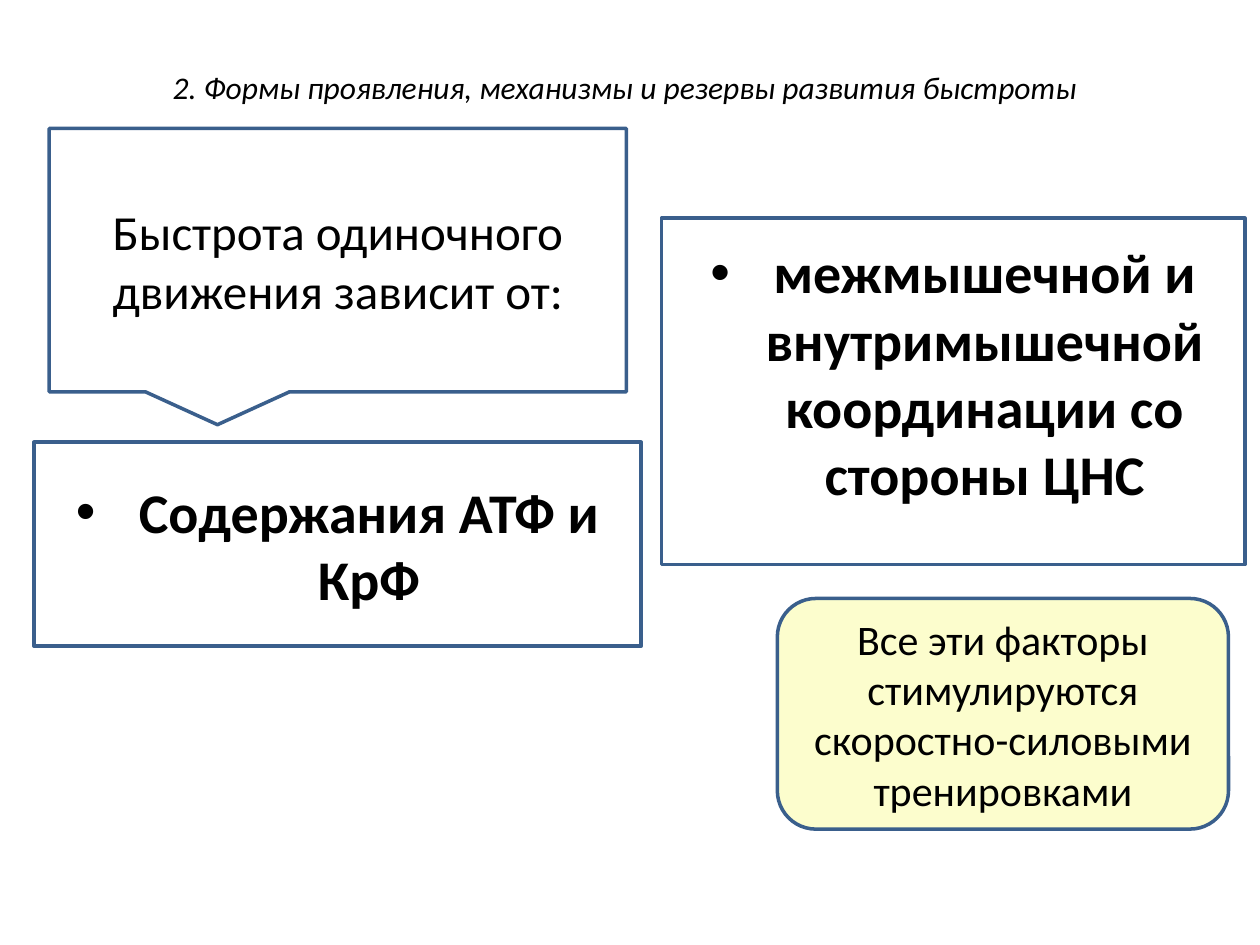
from lxml import etree
from pptx import Presentation
from pptx.dml.color import RGBColor
from pptx.enum.shapes import MSO_SHAPE
from pptx.enum.text import MSO_ANCHOR, PP_ALIGN
from pptx.oxml.ns import qn
from pptx.util import Pt

CALLOUT = MSO_SHAPE.RECTANGULAR_CALLOUT
RECT = MSO_SHAPE.RECTANGLE
ROUNDED = MSO_SHAPE.ROUNDED_RECTANGLE
MIDDLE = MSO_ANCHOR.MIDDLE
CENTER = PP_ALIGN.CENTER

BLACK = RGBColor(0x00, 0x00, 0x00)
WHITE = RGBColor(0xFF, 0xFF, 0xFF)
BLUE = RGBColor(0x3A, 0x5F, 0x8C)
CREAM = RGBColor(0xFC, 0xFD, 0xCD)
FONT = "Calibri"
INDENT = Pt(36)

TITLE = "2. Формы проявления, механизмы и резервы развития быстроты"
TITLE_BOX = (30.2, 21.6, 653.8, 56.2)

# kind, box, fill, text, size, is factor, bottom inset
BOXES = [
    (CALLOUT, (28.1, 73.4, 329.8, 150.5), WHITE,
     "Быстрота одиночного движения зависит от:", 28, False, 3.6),
    (RECT, (378, 124.6, 333.4, 198), WHITE,
     "межмышечной и внутримышечной координации со стороны ЦНС", 32, True, 25.2),
    (RECT, (19.4, 252.7, 347, 116.6), WHITE,
     "Содержания АТФ и КрФ", 32, True, 3.6),
    (ROUNDED, (444.2, 342, 257.8, 131.8), CREAM,
     "Все эти факторы стимулируются скоростно-силовыми тренировками", 24, False, 3.6),
]


def write(tf, text, size, bold=False, italic=False):
    tf.word_wrap = True
    tf.vertical_anchor = MIDDLE
    p = tf.paragraphs[0]
    p.alignment = CENTER
    r = p.add_run()
    r.text = text
    r.font.name = FONT
    r.font.size = Pt(size)
    r.font.bold = bold
    r.font.italic = italic
    r.font.color.rgb = BLACK
    return p


def add_bullet(p):
    pPr = p._p.get_or_add_pPr()
    pPr.set("marL", str(INDENT))
    pPr.set("indent", str(-INDENT))
    etree.SubElement(pPr, qn("a:buFont")).set("typeface", "Arial")
    etree.SubElement(pPr, qn("a:buChar")).set("char", "•")


def add_box(s, kind, box, fill, text, size, factor, bottom):
    sp = s.shapes.add_shape(kind, *map(Pt, box))
    sp.shadow.inherit = False
    sp.fill.solid()
    sp.fill.fore_color.rgb = fill
    sp.line.color.rgb = BLUE
    sp.line.width = Pt(2)
    sp.text_frame.margin_bottom = Pt(bottom)
    p = write(sp.text_frame, text, size, bold=factor)
    if factor:
        add_bullet(p)


def main():
    prs = Presentation()
    prs.slide_width, prs.slide_height = Pt(720), Pt(540)
    s = prs.slides.add_slide(prs.slide_layouts[5])
    title = s.shapes.title
    title.left, title.top, title.width, title.height = map(Pt, TITLE_BOX)
    write(title.text_frame, TITLE, 18, italic=True)
    for spec in BOXES:
        add_box(s, *spec)
    prs.save("out.pptx")


if __name__ == "__main__":
    main()
